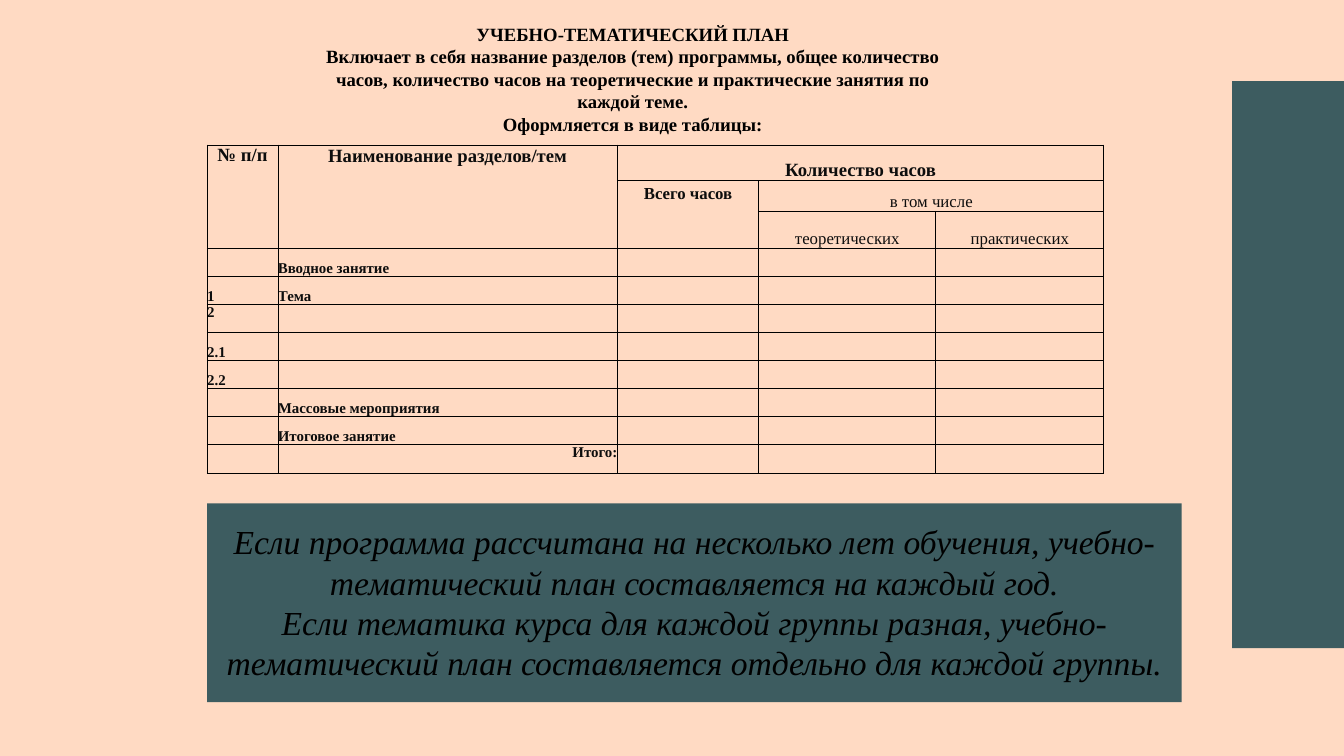
from dataclasses import dataclass

from lxml import etree
from pptx import Presentation
from pptx.dml.color import RGBColor
from pptx.enum.shapes import MSO_SHAPE
from pptx.enum.text import MSO_ANCHOR, PP_ALIGN
from pptx.oxml.ns import qn
from pptx.util import Pt

PX = 9525  # 96 px to the inch
RECT = MSO_SHAPE.RECTANGLE
LEFT, MID, RIGHT = PP_ALIGN.LEFT, PP_ALIGN.CENTER, PP_ALIGN.RIGHT
TOP, BASE = MSO_ANCHOR.TOP, MSO_ANCHOR.BOTTOM


@dataclass(frozen=True)
class Theme:
    font: str = "Times New Roman"
    back: str = "FFDAC3"
    block: str = "3D5C60"
    ink: str = "000000"
    soft: str = "0D0D0D"
    head: int = 20
    sub: int = 18
    row: int = 16
    note: int = 36
    rule: int = 12700


THEME = Theme()

TITLE = [
    "УЧЕБНО-ТЕМАТИЧЕСКИЙ ПЛАН",
    "Включает в себя название разделов (тем) программы, общее количество часов, "
    "количество часов на теоретические и практические занятия по каждой теме.",
    "Оформляется в виде таблицы:",
]
NOTE = [
    "Если программа рассчитана на несколько лет обучения, "
    "учебно-тематический план составляется на каждый год.",
    "Если тематика курса для каждой группы разная, "
    "учебно-тематический план составляется отдельно для каждой группы.",
]
COLS = [101, 485, 202, 253, 240]
ROWS = [51, 44, 53] + [40] * 7 + [42]
# row, column, rows spanned, columns spanned, text, size, bold, anchor, spacing
HEADS = [
    (0, 0, 3, 1, "№ п/п", THEME.head, True, TOP, 1),
    (0, 1, 3, 1, "Наименование разделов/тем", THEME.head, True, TOP, 1.05),
    (0, 2, 1, 3, "Количество часов", THEME.head, True, BASE, 1),
    (1, 2, 2, 1, "Всего часов", THEME.sub, True, TOP, 1.21),
    (1, 3, 1, 2, "в том числе", THEME.sub, False, BASE, 1),
    (2, 3, 1, 1, "теоретических", THEME.sub, False, BASE, 1),
    (2, 4, 1, 1, "практических", THEME.sub, False, BASE, 1),
]
# row, column, text, alignment, anchor
BODY = [
    (3, 1, "Вводное занятие", LEFT, BASE),
    (4, 0, "1", LEFT, BASE),
    (4, 1, "Тема", LEFT, BASE),
    (5, 0, "2", LEFT, TOP),
    (6, 0, "2.1", LEFT, BASE),
    (7, 0, "2.2", LEFT, BASE),
    (8, 1, "Массовые мероприятия", LEFT, BASE),
    (9, 1, "Итоговое занятие", LEFT, BASE),
    (10, 1, "Итого:", RIGHT, TOP),
]


def scale(box):
    return [n * PX for n in box]


def style(para, size, color, align=MID, bold=False, italic=False):
    para.alignment = align
    for run in para.runs:
        font = run.font
        font.name, font.size = THEME.font, Pt(size)
        font.bold, font.italic = bold, italic
        font.color.rgb = RGBColor.from_string(color)


def add_block(slide, box):
    shape = slide.shapes.add_shape(RECT, *scale(box))
    shape.shadow.inherit = False
    shape.fill.solid()
    shape.fill.fore_color.rgb = RGBColor.from_string(THEME.block)
    shape.line.fill.background()


def add_text(slide, box, lines, size, **look):
    frame = slide.shapes.add_textbox(*scale(box)).text_frame
    frame.word_wrap = True
    frame.text = "\n".join(lines)
    for para in frame.paragraphs:
        style(para, size, THEME.ink, **look)


def add_note(slide, box):
    x, y, w, h = box
    add_block(slide, box)
    add_text(slide, (x, y + 21, w, h - 42), NOTE, THEME.note, italic=True)


def clear(cell):
    """Give a cell thin black borders, no fill and no margins."""
    cell.margin_left = cell.margin_right = 0
    cell.margin_top = cell.margin_bottom = 0
    props = cell._tc.get_or_add_tcPr()
    for side in ("a:lnL", "a:lnR", "a:lnT", "a:lnB"):
        line = etree.SubElement(props, qn(side), w=str(THEME.rule))
        fill = etree.SubElement(line, qn("a:solidFill"))
        etree.SubElement(fill, qn("a:srgbClr"), val=THEME.ink)
    cell.fill.background()


def write(cell, text, size, align, bold, anchor):
    cell.text_frame.text = text
    cell.vertical_anchor = anchor
    para = cell.text_frame.paragraphs[0]
    style(para, size, THEME.soft, align, bold)
    return para


def add_plan(slide, x, y):
    box = scale((x, y, sum(COLS), sum(ROWS)))
    table = slide.shapes.add_table(len(ROWS), len(COLS), *box).table
    table.first_row = table.horz_banding = False
    for col, width in zip(table.columns, COLS):
        col.width = width * PX
    for row, height in zip(table.rows, ROWS):
        row.height = height * PX
    for cell in table.iter_cells():
        clear(cell)
    for r, c, down, across, text, size, bold, anchor, space in HEADS:
        cell = table.cell(r, c)
        if down * across > 1:
            cell.merge(table.cell(r + down - 1, c + across - 1))
        para = write(cell, text, size, MID, bold, anchor)
        para.line_spacing = float(space)
    for r, c, text, align, anchor in BODY:
        write(table.cell(r, c), text, THEME.row, align, True, anchor)


def main():
    deck = Presentation()
    deck.slide_width, deck.slide_height = scale((1920, 1080))
    slide = deck.slides.add_slide(deck.slide_layouts[6])
    fill = slide.background.fill
    fill.solid()
    fill.fore_color.rgb = RGBColor.from_string(THEME.back)
    add_block(slide, (1760, 116, 160, 810))
    add_text(slide, (424, 28, 960, 171), TITLE, THEME.head, bold=True)
    add_plan(slide, 296, 207)
    add_note(slide, (296, 719, 1392, 284))
    deck.save("out.pptx")


if __name__ == "__main__":
    main()
